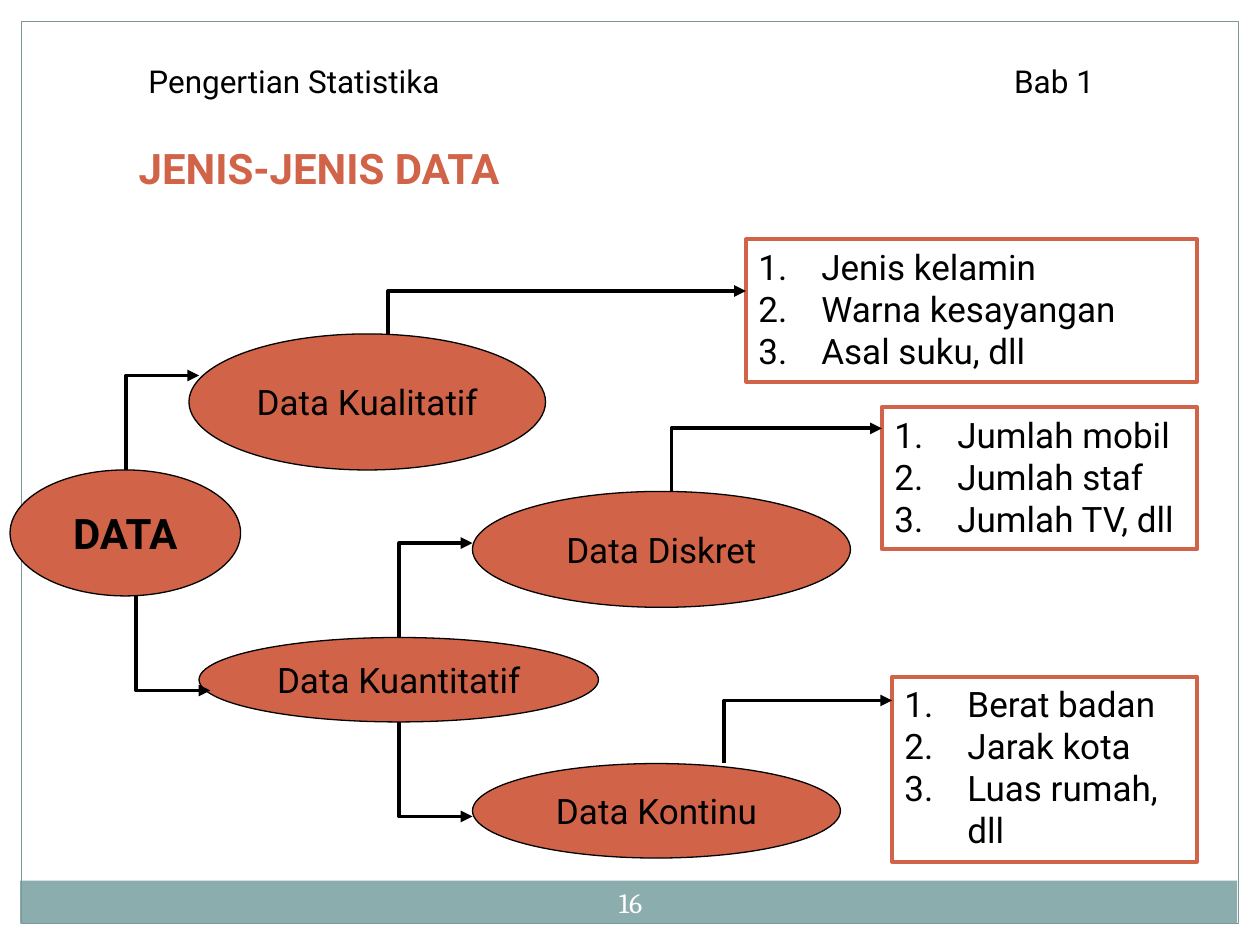
from dataclasses import dataclass

from lxml import etree
from pptx import Presentation
from pptx.dml.color import RGBColor
from pptx.enum import shapes, text
from pptx.oxml.ns import qn
from pptx.util import Inches, Pt

COLORS = {"accent": "D16349", "ink": "000000", "band": "8CADAE",
          "frame": "7C999A", "white": "FFFFFF"}


@dataclass
class Box:
    left: float
    top: float
    width: float
    height: float

    def lengths(self):
        return [Inches(v) for v in (self.left, self.top, self.width, self.height)]


@dataclass
class Node:
    label: str
    box: Box
    size: int = 20
    bold: bool = False


@dataclass
class Examples:
    items: list[str]
    box: Box


@dataclass
class Elbow:
    """Arrow from a start point up or down to end_y, then right to end_x."""
    x: float
    y: float
    end_x: float
    end_y: float


NODES = [
    Node("DATA", Box(0.08, 3.73, 1.83, 1), size=24, bold=True),
    Node("Data Kualitatif", Box(1.5, 2.65, 2.83, 1.08)),
    Node("Data Kuantitatif", Box(1.58, 5.06, 3.17, 0.67)),
    Node("Data Diskret", Box(3.75, 3.9, 3, 0.92)),
    Node("Data Kontinu", Box(3.75, 6.06, 2.92, 0.75)),
]
EXAMPLES = [
    Examples(["Jenis kelamin", "Warna kesayangan", "Asal suku, dll"],
             Box(5.92, 1.9, 3.58, 1.13)),
    Examples(["Jumlah mobil", "Jumlah staf", "Jumlah TV, dll"],
             Box(7, 3.23, 2.5, 1.13)),
    Examples(["Berat badan", "Jarak kota", "Luas rumah, dll"],
             Box(7.08, 5.37, 2.42, 1.47)),
]
ELBOWS = [
    Elbow(1, 3.73, 1.58, 2.98),
    Elbow(1.08, 4.73, 1.67, 5.48),
    Elbow(3.17, 5.73, 3.75, 6.48),
    Elbow(3.17, 5.06, 3.75, 4.31),
    Elbow(5.75, 6.06, 7.08, 5.56),
    Elbow(5.33, 3.9, 7, 3.4),
    Elbow(3.08, 2.65, 5.92, 2.31),
]


def rgb(name: str) -> RGBColor:
    return RGBColor.from_string(COLORS[name])


def write(shape, lines: list[str], *, size=20, color="ink", bold=False,
          font="Roboto", align=text.PP_ALIGN.LEFT,
          anchor=text.MSO_ANCHOR.TOP, wrap=True, numbered=False):
    frame = shape.text_frame
    frame.auto_size = text.MSO_AUTO_SIZE.NONE
    frame.word_wrap = wrap
    frame.vertical_anchor = anchor
    frame.text = "\n".join(lines)
    for paragraph in frame.paragraphs:
        paragraph.alignment = align
        paragraph.font.size = Pt(size)
        for run in paragraph.runs:
            run.font.name = font
            run.font.size = Pt(size)
            run.font.bold = bold
            run.font.color.rgb = rgb(color)
        if numbered:
            number_paragraph(paragraph)


def number_paragraph(paragraph):
    props = paragraph._p.get_or_add_pPr()
    props.set("marL", str(Inches(0.5)))
    props.set("indent", str(Inches(-0.5)))
    bullet = etree.Element(qn("a:buAutoNum"), type="arabicPeriod")
    props.insert_element_before(bullet, "a:tabLst", "a:defRPr", "a:extLst")


def add_tab_stop(paragraph, position: float):
    props = paragraph._p.get_or_add_pPr()
    stops = etree.Element(qn("a:tabLst"))
    etree.SubElement(stops, qn("a:tab"), pos=str(Inches(position)), algn="l")
    props.insert_element_before(stops, "a:defRPr", "a:extLst")


def style(shape, *, fill=None, line=None, weight=0.75):
    shape.shadow.inherit = False
    if fill:
        shape.fill.solid()
        shape.fill.fore_color.rgb = rgb(fill)
    else:
        shape.fill.background()
    if line:
        shape.line.color.rgb = rgb(line)
        shape.line.width = Pt(weight)
    else:
        shape.line.fill.background()


def add_panel(slide, box: Box, kind=shapes.MSO_SHAPE.RECTANGLE, **look):
    panel = slide.shapes.add_shape(kind, *box.lengths())
    style(panel, **look)
    return panel


def add_node(slide, node: Node):
    ellipse = add_panel(slide, node.box, shapes.MSO_SHAPE.OVAL,
                        fill="accent", line="ink")
    write(ellipse, [node.label], size=node.size, bold=node.bold, wrap=False,
          align=text.PP_ALIGN.CENTER, anchor=text.MSO_ANCHOR.MIDDLE)


def add_examples(slide, examples: Examples):
    panel = add_panel(slide, examples.box, line="accent", weight=2.25)
    write(panel, examples.items, numbered=True)


def add_elbow(slide, elbow: Elbow):
    builder = slide.shapes.build_freeform(
        Inches(elbow.x), Inches(elbow.y), scale=1.0)
    corner = (Inches(elbow.x), Inches(elbow.end_y))
    tip = (Inches(elbow.end_x), Inches(elbow.end_y))
    builder.add_line_segments([corner, tip], close=False)
    arrow = builder.convert_to_shape()
    style(arrow, line="ink", weight=2.25)
    etree.SubElement(arrow.line._get_or_add_ln(), qn("a:tailEnd"), type="triangle")


def main():
    deck = Presentation()
    deck.slide_width, deck.slide_height = Inches(10), Inches(7.5)
    slide = deck.slides.add_slide(deck.slide_layouts[5])

    add_panel(slide, Box(0.16, 6.99, 9.66, 0.34), fill="band")
    add_panel(slide, Box(0.17, 0.17, 9.66, 7.16), line="frame")

    page_number = slide.shapes.add_textbox(*Box(4.67, 6.92, 0.67, 0.48).lengths())
    write(page_number, ["16"], size=16, color="white", font="Cambria",
          align=text.PP_ALIGN.CENTER, anchor=text.MSO_ANCHOR.MIDDLE)

    title = slide.shapes.title
    title.left, title.top, title.width, title.height = Box(1, 1.08, 7.92, 0.5).lengths()
    write(title, ["JENIS-JENIS DATA"], size=24, color="accent", bold=True)

    for node in NODES:
        add_node(slide, node)
    for examples in EXAMPLES:
        add_examples(slide, examples)
    for elbow in ELBOWS:
        add_elbow(slide, elbow)

    chapter = slide.shapes.add_textbox(*Box(1.08, 0.44, 7.93, 0.4).lengths())
    write(chapter, ["Pengertian Statistika\tBab 1"], size=18)
    add_tab_stop(chapter.text_frame.paragraphs[0], 6.87)

    deck.save("out.pptx")


if __name__ == "__main__":
    main()
